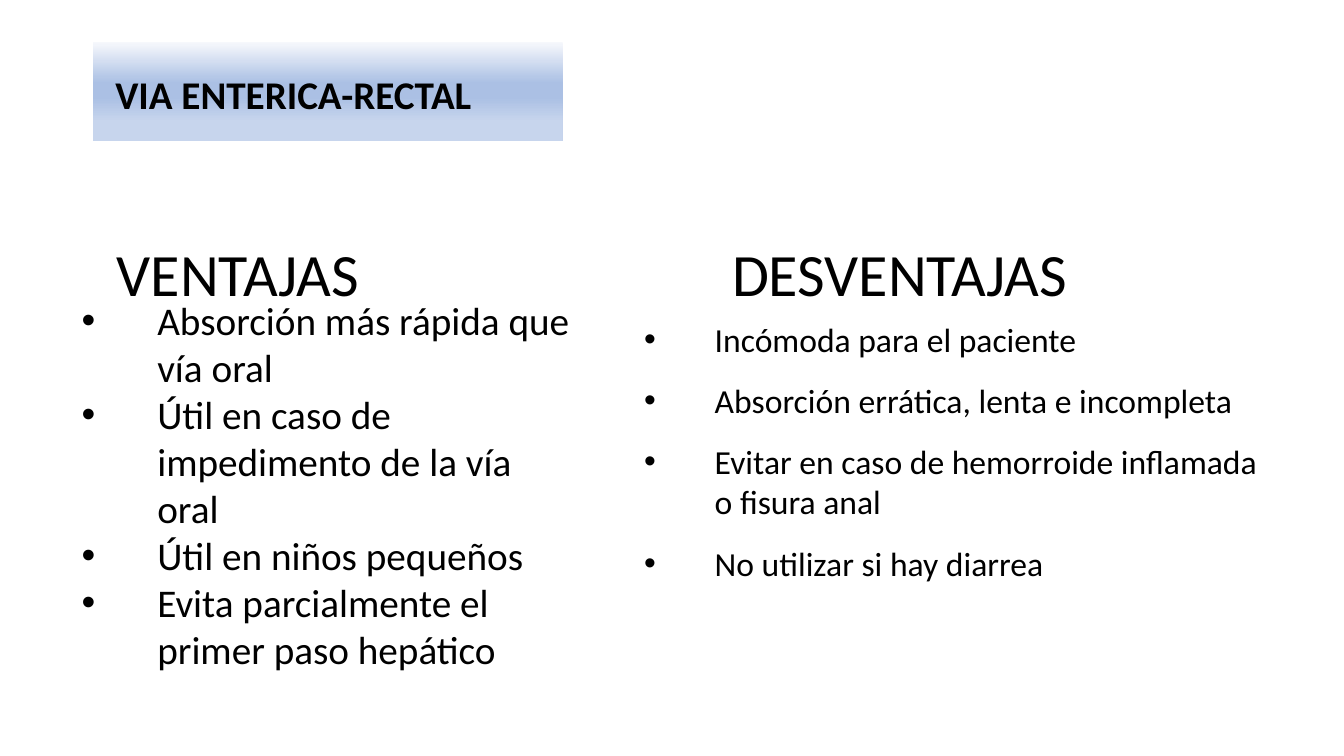
import pptx
import pptx.dml.color
import pptx.enum.shapes
import pptx.enum.text
import pptx.oxml.ns
import pptx.util
from lxml import etree

Inches = pptx.util.Inches
Pt = pptx.util.Pt
MIDDLE = pptx.enum.text.MSO_ANCHOR.MIDDLE
TOP = pptx.enum.text.MSO_ANCHOR.TOP


def color(value):
    return pptx.dml.color.RGBColor.from_string(value)


def add_xml(parent, tag, **attributes):
    return etree.SubElement(parent, pptx.oxml.ns.qn(tag), attributes)


class SlideBuilder:
    font_name = "Calibri"
    text_color = "000000"

    def __init__(self, slide):
        self.slide = slide

    def prepare_frame(self, shape, anchor, insets=(0.1, 0.05, 0.1, 0.05)):
        frame = shape.text_frame
        frame.word_wrap = True
        frame.vertical_anchor = anchor
        (frame.margin_left, frame.margin_top,
         frame.margin_right, frame.margin_bottom) = map(Inches, insets)
        return frame

    def add_run(self, paragraph, text, size, bold=False):
        run = paragraph.add_run()
        run.text = text
        run.font.name = self.font_name
        run.font.size = Pt(size)
        run.font.bold = bold
        run.font.color.rgb = color(self.text_color)

    def title(self, box, text, stops):
        shape = self.slide.shapes.add_shape(
            pptx.enum.shapes.MSO_SHAPE.RECTANGLE, *map(Inches, box))
        shape.shadow.inherit = False
        shape.line.fill.background()
        # Vertical gradient with several stops
        shape.fill.gradient()
        gradient = shape._element.spPr.find(pptx.oxml.ns.qn("a:gradFill"))
        for child in list(gradient):
            gradient.remove(child)
        stop_list = add_xml(gradient, "a:gsLst")
        for percent, value in stops:
            stop = add_xml(stop_list, "a:gs", pos=str(percent * 1000))
            add_xml(stop, "a:srgbClr", val=value)
        add_xml(gradient, "a:lin", ang="5400000", scaled="0")

        paragraph = self.prepare_frame(shape, MIDDLE).paragraphs[0]
        paragraph.alignment = pptx.enum.text.PP_ALIGN.LEFT
        paragraph.line_spacing = 0.9
        self.add_run(paragraph, " ", 40, bold=True)
        self.add_run(paragraph, text, 28, bold=True)

    def column_headings(self, box, left, right, tab, size):
        shape = self.slide.shapes.add_textbox(*map(Inches, box))
        paragraph = self.prepare_frame(
            shape, MIDDLE, (0.24, 0.05, 0.1, 0.05)).paragraphs[0]
        properties = paragraph._p.get_or_add_pPr()
        tabs = add_xml(properties, "a:tabLst")
        add_xml(tabs, "a:tab", pos=str(Inches(tab)), algn="l")
        paragraph.line_spacing = 0.9
        self.add_run(paragraph, f"{left}\t{right}", size)

    def bullets(self, box, items, size, indent, anchor, insets, gap=0):
        shape = self.slide.shapes.add_textbox(*map(Inches, box))
        frame = self.prepare_frame(shape, anchor, insets)
        for index, item in enumerate(items):
            paragraph = frame.add_paragraph() if index else frame.paragraphs[0]
            properties = paragraph._p.get_or_add_pPr()
            properties.set("marL", str(Inches(indent)))
            properties.set("indent", str(-Inches(indent)))
            add_xml(properties, "a:buFont", typeface="Arial")
            add_xml(properties, "a:buChar", char="•")
            if index and gap:
                paragraph.space_before = Pt(gap)
            self.add_run(paragraph, item, size)


def main():
    presentation = pptx.Presentation()
    presentation.slide_width = Inches(13.33)
    presentation.slide_height = Inches(7.5)
    builder = SlideBuilder(
        presentation.slides.add_slide(presentation.slide_layouts[6]))

    # Title
    builder.title(
        (0.92, 0.42, 4.66, 0.98), "VIA ENTERICA-RECTAL",
        [(0, "F6F8FC"), (41, "ABC0E4"), (56, "ABC0E4"), (80, "C7D5ED")])

    # Column headings
    builder.column_headings(
        (0.92, 2.12, 11.49, 1.25), "VENTAJAS", "DESVENTAJAS", 6.1, 42.9)

    # Advantages
    builder.bullets(
        (0.74, 2.84, 5.01, 4.26),
        ["Absorción más rápida que vía oral",
         "Útil en caso de impedimento de la vía oral",
         "Útil en niños pequeños",
         "Evita parcialmente el primer paso hepático"],
        28, 0.75, MIDDLE, (0.07, 0.07, 0.07, 0.4))

    # Disadvantages
    builder.bullets(
        (6.29, 3.11, 6.51, 2.04),
        ["Incómoda para el paciente",
         "Absorción errática, lenta e incompleta",
         "Evitar en caso de hemorroide inflamada o fisura anal",
         "No utilizar si hay diarrea"],
        24, 0.7, TOP, (0.1, 0.05, 0.1, 0.05), gap=15)

    presentation.save("out.pptx")


if __name__ == "__main__":
    main()
